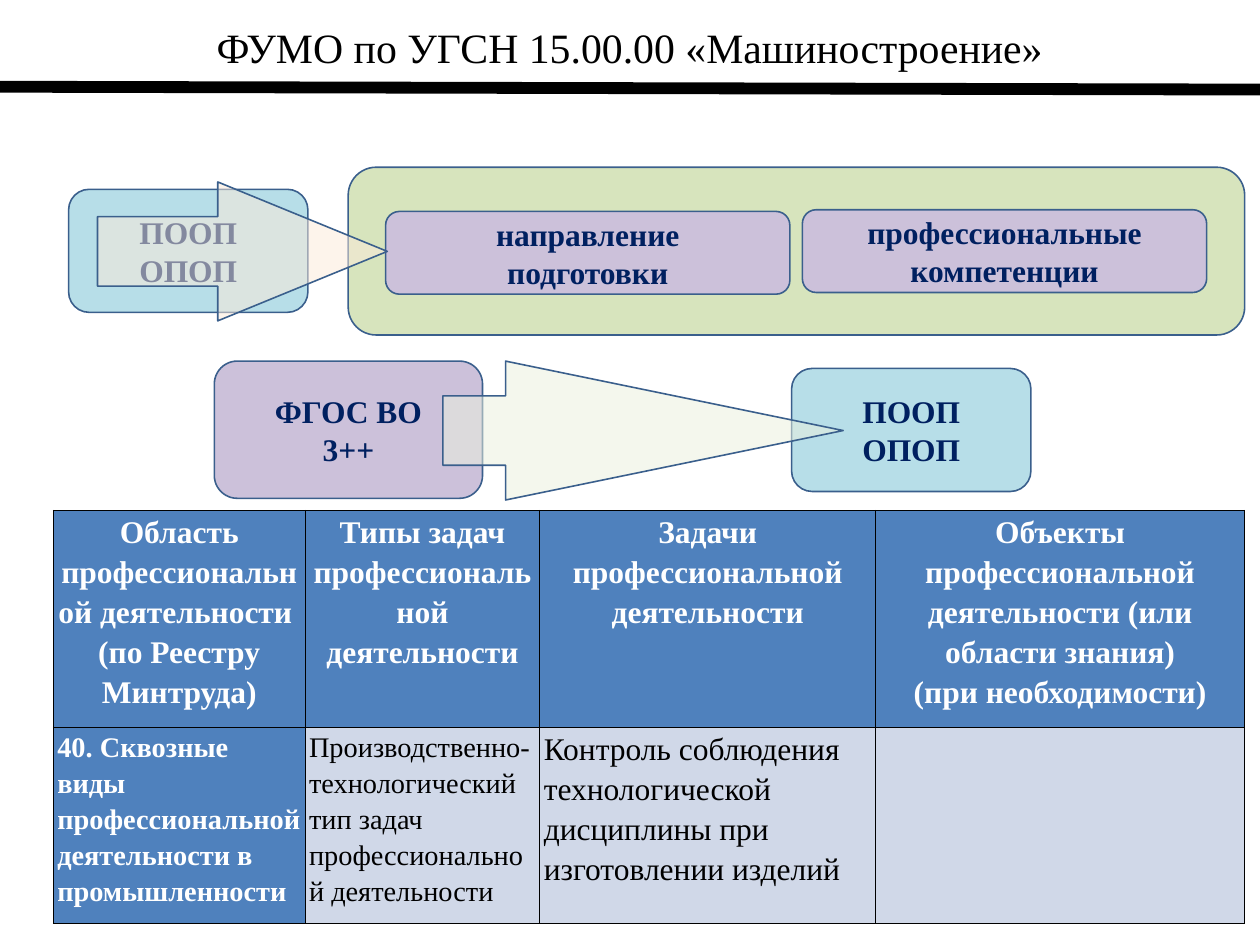
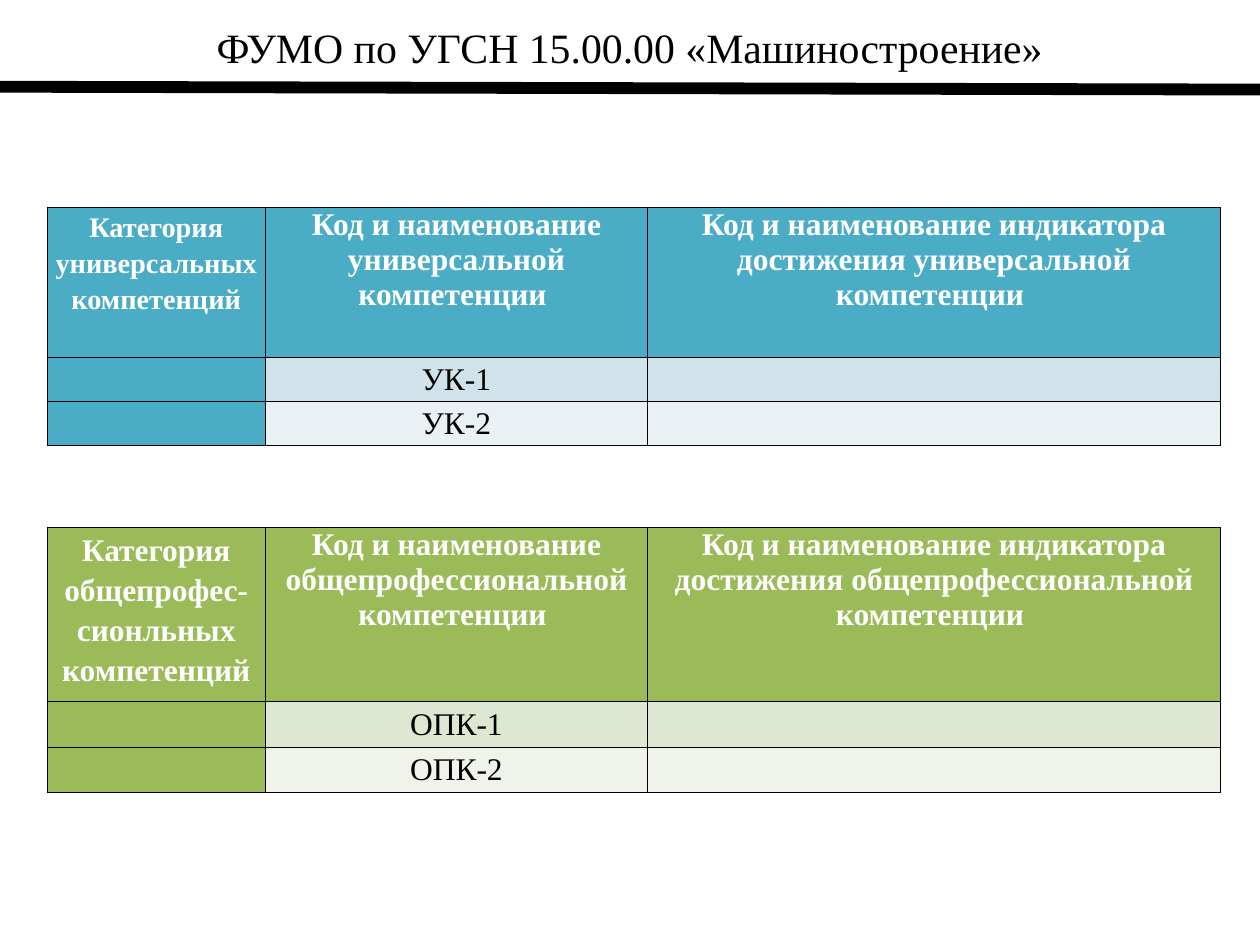
from lxml import etree
from pptx import Presentation
from pptx.dml.color import RGBColor
from pptx.enum.shapes import MSO_CONNECTOR, MSO_SHAPE
from pptx.enum.text import MSO_ANCHOR, MSO_AUTO_SIZE, PP_ALIGN
from pptx.oxml.ns import qn
from pptx.util import Inches, Pt

ROUNDED = MSO_SHAPE.ROUNDED_RECTANGLE
ARROW = MSO_SHAPE.RIGHT_ARROW
STRAIGHT = MSO_CONNECTOR.STRAIGHT
TOP, MIDDLE = MSO_ANCHOR.TOP, MSO_ANCHOR.MIDDLE
LEFT, CENTER = PP_ALIGN.LEFT, PP_ALIGN.CENTER
NO_FIT = MSO_AUTO_SIZE.NONE

FONT = "Times New Roman"
PAGE_WIDTH, PAGE_HEIGHT = 22.22, 16.67
TITLE = "ФУМО по УГСН 15.00.00 «Машиностроение»"
COLORS = {
    "black": "000000", "white": "FFFFFF", "navy": "002060", "outline": "3A5F8C",
    "green": "D7E4BD", "violet": "CCC1DA", "sky": "B7DEE8",
    "peach": "FDEADA", "pale_green": "EBF1DE",
}
# Heading colour, then the colour of each body row
TABLE_COLORS = {
    "blue": ["4F81BD", "D0D8E8"],
    "teal": ["4BACC6", "D0E3EA", "E9F1F5"],
    "olive": ["9BBB59", "DEE7D1", "EFF3EA"],
}


def rgb(name):
    return RGBColor.from_string(COLORS[name])


def inches(*lengths):
    return [Inches(length) for length in lengths]


def write(frame, text, size, color, bold=False, align=CENTER, spacing=None):
    """Fill a text frame; each line of text becomes a paragraph."""
    frame.text = text
    for para in frame.paragraphs:
        para.alignment = align
        if spacing:
            para.line_spacing = spacing
        para.font.name = FONT
        para.font.size = Pt(size)
        para.font.bold = bold
        para.font.color.rgb = rgb(color)


def set_margins(target, side, edge):
    target.margin_left = target.margin_right = Inches(side)
    target.margin_top = target.margin_bottom = Inches(edge)


def add_page(deck):
    """Add a slide with the shared title and the heavy rule below it."""
    slide = deck.slides.add_slide(deck.slide_layouts[5])
    title = slide.shapes.title
    title.left, title.top, title.width, title.height = inches(0, 0.28, PAGE_WIDTH, 1.12)
    frame = title.text_frame
    frame.word_wrap = True
    frame.auto_size = NO_FIT
    frame.vertical_anchor = TOP
    set_margins(frame, 0.22, 0.11)
    write(frame, TITLE, 53, "black")

    rule = slide.shapes.add_connector(STRAIGHT, *inches(0, 1.53, PAGE_WIDTH, 1.58))
    rule.line.color.rgb = rgb("black")
    rule.line.width = Pt(15)
    etree.SubElement(rule._element.spPr, qn("a:effectLst"))
    return slide


def add_outlined(slide, kind, box, fill):
    shape = slide.shapes.add_shape(kind, *inches(*box))
    shape.shadow.inherit = False
    shape.fill.solid()
    shape.fill.fore_color.rgb = rgb(fill)
    shape.line.color.rgb = rgb("outline")
    shape.line.width = Pt(2)
    return shape


def add_label(slide, box, fill, text):
    frame = add_outlined(slide, ROUNDED, box, fill).text_frame
    frame.word_wrap = True
    frame.vertical_anchor = MIDDLE
    set_margins(frame, 0.21, 0.11)
    write(frame, text, 40, "navy", bold=True)


def add_clear_arrow(slide, box, fill, head):
    """Add a half-transparent arrow; head is its head length over its height."""
    arrow = add_outlined(slide, ARROW, box, fill)
    arrow.adjustments[1] = head
    color = arrow._element.spPr.find(qn("a:solidFill"))[0]
    etree.SubElement(color, qn("a:alpha"), val="52000")


def add_programme_region(slide, left, top):
    add_outlined(slide, ROUNDED, (left + 4.93, top, 15.81, 2.96), "green")
    add_label(slide, (left + 12.94, top + 0.75, 7.13, 1.46), "violet",
              "профессиональные\nкомпетенции")
    add_label(slide, (left + 5.59, top + 0.78, 7.13, 1.46), "violet",
              "направление\nподготовки")
    add_label(slide, (left, top + 0.39, 4.22, 2.17), "sky", "ПООП\nОПОП")
    add_clear_arrow(slide, (left + 0.51, top + 0.26, 5.11, 2.45), "peach", 1.22)


def add_standard_region(slide, left, top):
    add_label(slide, (left + 10.18, top + 0.13, 4.22, 2.17), "sky", "ПООП\nОПОП")
    add_label(slide, (left, top, 4.73, 2.42), "violet", "ФГОС ВО\n3++")
    add_clear_arrow(slide, (left + 4.03, top, 7.06, 2.45), "pale_green", 2.43)


def add_borders(cell):
    properties = cell._tc.get_or_add_tcPr()
    for side in ("a:lnL", "a:lnR", "a:lnT", "a:lnB"):
        line = etree.SubElement(properties, qn(side), w=str(Pt(1)))
        fill = etree.SubElement(line, qn("a:solidFill"))
        etree.SubElement(fill, qn("a:srgbClr"), val=COLORS["black"])


def add_grid(slide, left, top, widths, heights, theme, rows, sizes,
             body_align=CENTER, heading_spacing=1.0):
    """Add a table whose first row and first column are headings."""
    table = slide.shapes.add_table(
        len(rows), len(widths), *inches(left, top, sum(widths), sum(heights))).table
    table.horz_banding = False
    for column, width in zip(table.columns, widths):
        column.width = Inches(width)
    for row, height in zip(table.rows, heights):
        row.height = Inches(height)

    colors = TABLE_COLORS[theme]
    for r, texts in enumerate(rows):
        for c, text in enumerate(texts):
            cell = table.cell(r, c)
            heading = r == 0 or c == 0
            add_borders(cell)
            cell.fill.solid()
            cell.fill.fore_color.rgb = RGBColor.from_string(colors[0 if heading else r])
            if text:
                set_margins(cell, 0.07, 0)
                write(cell.text_frame, text, sizes[r][c],
                      "white" if heading else "black", bold=heading,
                      align=body_align if r else CENTER,
                      spacing=heading_spacing if r == 0 and c else 1.15)


def add_activity_slide(deck):
    slide = add_page(deck)
    add_programme_region(slide, 1.21, 2.95)
    add_standard_region(slide, 3.78, 6.37)
    rows = [
        ["Область профессиональной деятельности \v(по Реестру Минтруда)",
         "Типы задач профессиональной деятельности",
         "Задачи профессиональной деятельности",
         "Объекты профессиональной деятельности (или области знания)\n"
         "(при необходимости)"],
        ["40. Сквозные виды профессиональной деятельности в промышленности",
         "Производственно-технологический тип задач профессиональной деятельности",
         "Контроль соблюдения технологической дисциплины при изготовлении изделий",
         ""],
    ]
    add_grid(slide, 0.94, 9, [4.44, 4.14, 5.92, 6.51], [3.83, 3.45], "blue", rows,
             [[40] * 4, [36, 36, 40, 40]], body_align=LEFT, heading_spacing=1.15)


def add_competence_slide(deck):
    slide = add_page(deck)
    tables = [
        (3.66, [2.65, 0.77, 0.77], "teal", 36, "универсальных", "универсальной", "УК"),
        (9.31, [3.07, 0.8, 0.8], "olive", 40, "общепрофес-сионльных",
         "общепрофессиональной", "ОПК"),
    ]
    for top, heights, theme, first_size, plural, singular, code in tables:
        rows = [
            [f"Категория {plural} компетенций",
             f"Код и наименование {singular} компетенции ",
             f"Код и наименование индикатора достижения {singular} компетенции "],
            ["", f"{code}-1", ""],
            ["", f"{code}-2", ""],
        ]
        add_grid(slide, 0.83, top, [3.85, 6.74, 10.1], heights, theme, rows,
                 [[first_size, 40, 40], [40] * 3, [40] * 3])


def main():
    deck = Presentation()
    deck.slide_width, deck.slide_height = inches(PAGE_WIDTH, PAGE_HEIGHT)
    add_activity_slide(deck)
    add_competence_slide(deck)
    deck.save("out.pptx")


if __name__ == "__main__":
    main()
